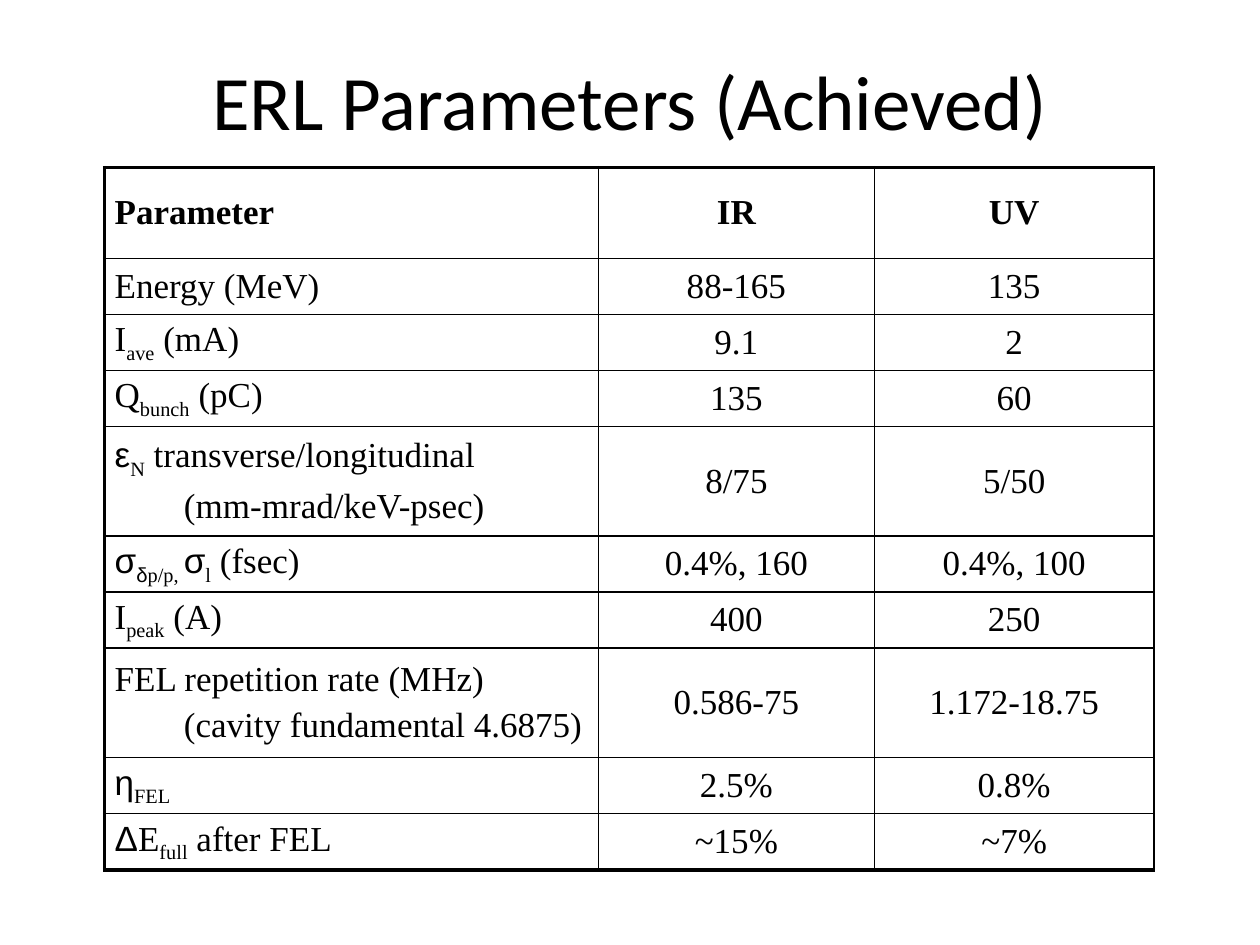
"""Build a slide with a table of achieved ERL parameters."""
import pptx
import pptx.dml.color
import pptx.enum.text
import pptx.oxml.ns
import pptx.util
from lxml import etree

Inches = pptx.util.Inches
Pt = pptx.util.Pt

THEME = {
    "ink": "000000",
    "title_font": "Calibri",
    "body_font": "Times New Roman",
    "greek_font": "Arial",
    "title_size": 44,
    "body_size": 20,
    "space_before": 4,
    "thin": 1,
    "thick": 2.25,
    "indent": 0.55,
}

TITLE = "ERL Parameters (Achieved)"
HEADERS = ("Parameter", "IR", "UV")
PLAIN, SUB, GREEK, GREEK_SUB = "plain", "sub", "greek", "greek sub"

ROWS = [
    ([[("Energy (MeV)", PLAIN)]], "88-165", "135"),
    ([[("I", PLAIN), ("ave", SUB), (" (mA)", PLAIN)]], "9.1", "2"),
    ([[("Q", PLAIN), ("bunch", SUB), (" (pC)", PLAIN)]], "135", "60"),
    ([[("ε", GREEK), ("N", SUB), (" transverse/longitudinal", PLAIN)],
      [("(mm-mrad/keV-psec)", PLAIN)]], "8/75", "5/50"),
    ([[("σ", GREEK), ("δ", GREEK_SUB), ("p/p, ", SUB), ("σ", GREEK),
       ("l", SUB), (" (fsec)", PLAIN)]], "0.4%, 160", "0.4%, 100"),
    ([[("I", PLAIN), ("peak", SUB), (" (A)", PLAIN)]], "400", "250"),
    ([[("FEL repetition rate (MHz)", PLAIN)],
      [("(cavity fundamental 4.6875)", PLAIN)]], "0.586-75", "1.172-18.75"),
    ([[("η", GREEK), ("FEL", SUB)]], "2.5%", "0.8%"),
    ([[("Δ", GREEK), ("E", PLAIN), ("full", SUB), (" after FEL", PLAIN)]], "~15%", "~7%"),
]

TABLE_LEFT, TABLE_TOP = 0.83, 1.33
COLUMN_WIDTHS = (3.92, 2.19, 2.22)
HEADER_HEIGHT = 0.72
HEIGHT_BY_LINES = {1: 0.445, 2: 0.87}


def add_run(paragraph, text, font_name, size, bold=False, subscript=False):
    run = paragraph.add_run()
    run.text = text
    run.font.name = font_name
    run.font.size = Pt(size)
    run.font.bold = bold
    run.font.color.rgb = pptx.dml.color.RGBColor.from_string(THEME["ink"])
    if subscript:
        run.font._element.set("baseline", "-25000")


def set_borders(cell, widths):
    properties = cell._tc.get_or_add_tcPr()
    for index, (side, width) in enumerate(widths.items()):
        line = etree.Element(pptx.oxml.ns.qn(f"a:ln{side}"), w=str(int(Pt(width))))
        fill = etree.SubElement(line, pptx.oxml.ns.qn("a:solidFill"))
        etree.SubElement(fill, pptx.oxml.ns.qn("a:srgbClr"), val=THEME["ink"])
        properties.insert(index, line)


def fill_cell(cell, lines, centered, bold):
    cell.fill.background()
    cell.vertical_anchor = pptx.enum.text.MSO_ANCHOR.MIDDLE
    cell.margin_left = cell.margin_right = Inches(0.08)
    cell.margin_top = cell.margin_bottom = Inches(0.04)
    frame = cell.text_frame
    alignment = pptx.enum.text.PP_ALIGN
    for index, runs in enumerate(lines):
        paragraph = frame.add_paragraph() if index else frame.paragraphs[0]
        paragraph.alignment = alignment.CENTER if centered else alignment.LEFT
        paragraph.space_before = Pt(THEME["space_before"])
        if index:
            paragraph._p.get_or_add_pPr().set("marL", str(int(Inches(THEME["indent"]))))
        for text, style in runs:
            font_name = THEME["greek_font" if GREEK in style else "body_font"]
            add_run(paragraph, text, font_name, THEME["body_size"], bold, SUB in style)


def add_title(slide):
    title = slide.shapes.title
    title.left, title.top, title.width, title.height = map(Inches, (0.5, 0.17, 9, 1.25))
    title.text_frame.vertical_anchor = pptx.enum.text.MSO_ANCHOR.MIDDLE
    paragraph = title.text_frame.paragraphs[0]
    paragraph.alignment = pptx.enum.text.PP_ALIGN.CENTER
    add_run(paragraph, TITLE, THEME["title_font"], THEME["title_size"])


def add_parameter_table(slide):
    heights = [HEADER_HEIGHT] + [HEIGHT_BY_LINES[len(row[0])] for row in ROWS]
    table = slide.shapes.add_table(
        len(heights), len(COLUMN_WIDTHS), Inches(TABLE_LEFT), Inches(TABLE_TOP),
        Inches(sum(COLUMN_WIDTHS)), Inches(sum(heights))).table
    table.first_row = table.horz_banding = False
    for column, width in zip(table.columns, COLUMN_WIDTHS):
        column.width = Inches(width)
    for row, height in zip(table.rows, heights):
        row.height = Inches(height)

    thin, thick = THEME["thin"], THEME["thick"]
    last_row = len(heights) - 1
    for row_index, values in enumerate([HEADERS] + ROWS):
        for column_index, value in enumerate(values):
            lines = [[(value, PLAIN)]] if isinstance(value, str) else value
            cell = table.cell(row_index, column_index)
            fill_cell(cell, lines, column_index > 0, row_index == 0)
            set_borders(cell, {
                "L": thick if column_index == 0 else thin,
                "R": thin,
                "T": thick if row_index == 0 else thin,
                "B": thick if row_index == last_row else thin,
            })


def main():
    presentation = pptx.Presentation()
    presentation.slide_width, presentation.slide_height = Inches(10), Inches(7.5)
    slide = presentation.slides.add_slide(presentation.slide_layouts[5])
    add_title(slide)
    add_parameter_table(slide)
    presentation.save("out.pptx")


if __name__ == "__main__":
    main()
